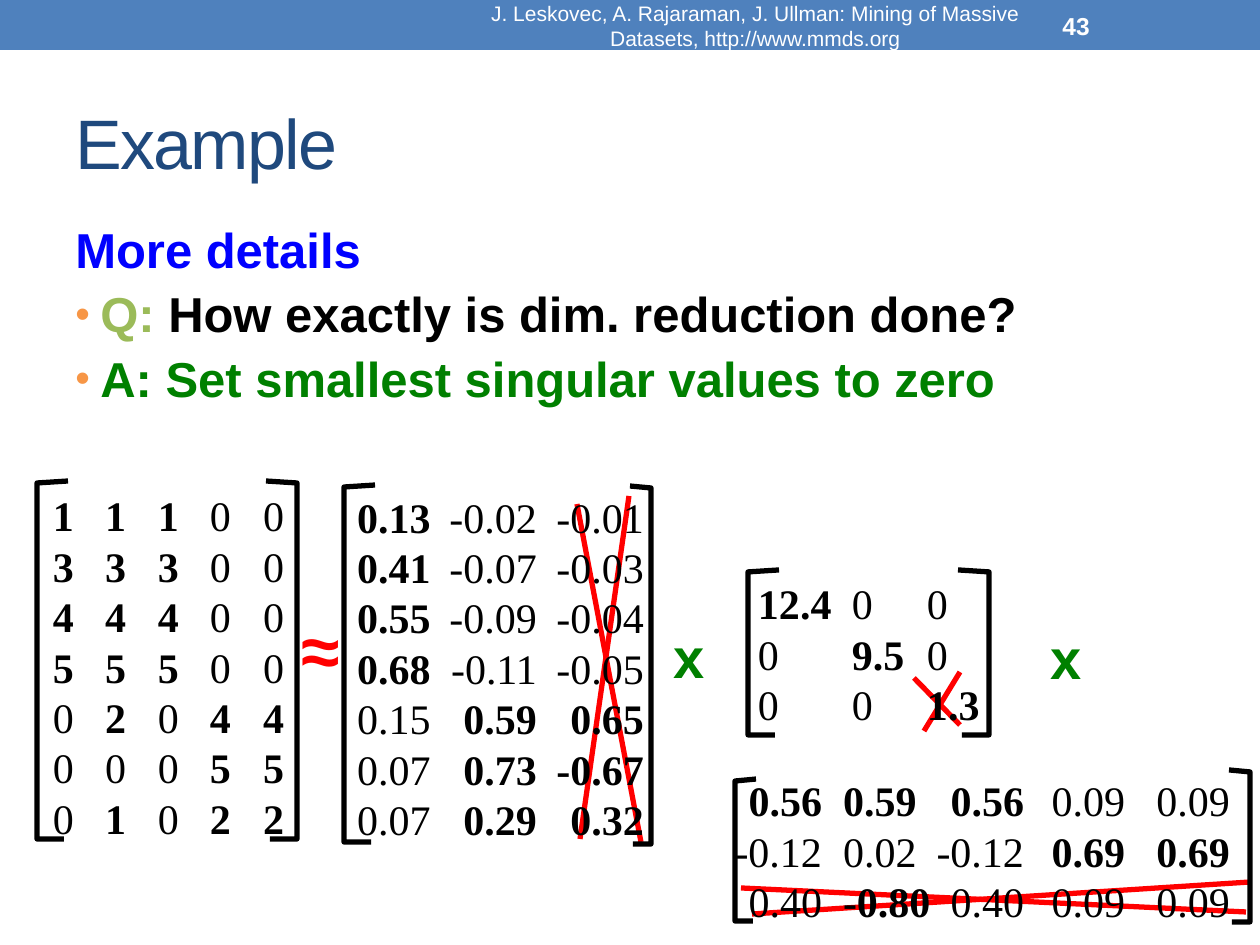
import itertools

import pptx
import pptx.dml.color
import pptx.enum.shapes
import pptx.enum.text
import pptx.oxml.ns
import pptx.util
from lxml import etree

EMU_PER_PX = 914400 / 126
ANCHOR = pptx.enum.text.MSO_ANCHOR
ALIGN = pptx.enum.text.PP_ALIGN

THEME = {
    "bar": "4F81BD", "ink": "000000", "cross": "FF0000", "bullet": "F79646",
    "stroke": 3, "bullet_pct": 85, "row_pitch": 28.8,
    "title": {"size": 40, "color": "1F497D"},
    "lead": {"size": 28, "color": "0000FF", "bold": True},
    "question": {"size": 28, "color": "9BBB59", "bold": True},
    "body": {"size": 28, "color": "000000", "bold": True},
    "answer": {"size": 28, "color": "008000", "bold": True},
    "credit": {"size": 12, "color": "FFFFFF"},
    "number": {"size": 14, "color": "FFFFFF", "bold": True},
    "times": {"size": 32, "color": "008000", "bold": True},
    "approx": {"size": 40, "color": "FF0000", "bold": True},
    "cell": {"size": 24, "color": "000000", "name": "Times New Roman"},
}

# Box (left, top, width, height), columns (alignment, x), rows; * marks a bold cell.
MATRICES = [
    ((31, 481, 274, 369),
     [("l", 53), ("l", 105), ("l", 158), ("l", 210), ("l", 263)],
     ["*1 *1 *1 0 0", "*3 *3 *3 0 0", "*4 *4 *4 0 0", "*5 *5 *5 0 0",
      "0 *2 0 *4 *4", "0 0 0 *5 *5", "0 *1 0 *2 *2"]),
    ((328, 482, 346, 369),
     [("l", 357), ("r", 537), ("r", 644)],
     ["*0.13 -0.02 -0.01", "*0.41 -0.07 -0.03", "*0.55 -0.09 -0.04",
      "*0.68 -0.11 -0.05", "0.15 *0.59 *0.65", "0.07 *0.73 *-0.67",
      "0.07 *0.29 *0.32"]),
    ((746, 569, 273, 165),
     [("l", 758), ("l", 852), ("l", 927)],
     ["*12.4 0 0", "0 *9.5 0", "0 0 *1.3"]),
    ((724, 766, 536, 165),
     [("r", 822), ("l", 843), ("r", 1024), ("r", 1125), ("r", 1230)],
     ["*0.56 *0.59 *0.56 0.09 0.09", "-0.12 0.02 -0.12 *0.69 *0.69",
      "0.40 *-0.80 0.40 0.09 0.09"]),
]

# Upright x, top, bottom, arm length (negative points left).
BRACKETS = [
    (37, 481, 839, 31), (297, 481, 839, -31),
    (344, 485, 842, 31), (651, 486, 844, -21),
    (748, 570, 735, 31), (989, 570, 735, -31),
    (735, 779, 921, 21), (1250, 770, 922, -21),
]

CROSS_STROKES = [
    (924, 731, 960, 672), (914, 678, 960, 725),
    (580, 839, 629, 496), (577, 504, 641, 842),
    (1246, 912, 741, 888), (752, 914, 1250, 882),
]


def px(n):
    return pptx.util.Emu(round(n * EMU_PER_PX))


def rgb(value):
    return pptx.dml.color.RGBColor.from_string(value)


def set_all(target, values):
    for name, value in values.items():
        setattr(target, name, value)


def add_run(p, text, style):
    r = p.add_run()
    r.text = text
    values = {"name": "Arial", "bold": False, **style}
    r.font.color.rgb = rgb(values.pop("color"))
    values["size"] = pptx.util.Pt(values["size"])
    set_all(r.font, values)
    return r


def add_box(s, box, **frame):
    tf = s.shapes.add_textbox(*map(px, box)).text_frame
    set_all(tf, {"word_wrap": True, **frame})
    return tf


def add_label(s, box, text, style, align=ALIGN.LEFT, **frame):
    tf = add_box(s, box, vertical_anchor=ANCHOR.MIDDLE, **frame)
    p = tf.paragraphs[0]
    p.alignment = align
    return add_run(p, text, THEME[style])


def add_child(parent, tag, **attrs):
    return etree.SubElement(parent, pptx.oxml.ns.qn(tag), attrs)


def next_paragraph(tf, index):
    return tf.add_paragraph() if index else tf.paragraphs[0]


def add_bullet(p):
    pPr = p._p.get_or_add_pPr()
    add_child(add_child(pPr, "a:buClr"), "a:srgbClr", val=THEME["bullet"])
    add_child(pPr, "a:buSzPct", val=str(THEME["bullet_pct"] * 1000))
    add_child(pPr, "a:buFont", typeface="Arial")
    add_child(pPr, "a:buChar", char="•")


def add_body(s):
    lines = [
        [("More details", "lead")],
        [("Q: ", "question"), ("How exactly is dim. reduction done?", "body")],
        [("A: Set smallest singular values to zero", "answer")],
    ]
    tf = add_box(s, (63, 220, 1134, 672))
    for i, runs in enumerate(lines):
        p = next_paragraph(tf, i)
        set_all(p, {"line_spacing": 0.9, "space_before": pptx.util.Pt(6.5)})
        pPr = p._p.get_or_add_pPr()
        pPr.set("marL", str(px(25)))
        pPr.set("indent", str(-px(25)))
        if i:
            add_bullet(p)
        for text, style in runs:
            add_run(p, text, THEME[style])


def add_matrix(s, box, columns, rows):
    """Set each row as one paragraph whose cells sit on tab stops."""
    tf = add_box(s, box, margin_left=0, margin_right=0, margin_top=px(9))
    for i, row in enumerate(rows):
        p = next_paragraph(tf, i)
        p.line_spacing = pptx.util.Pt(THEME["row_pitch"])
        tabs = add_child(p._p.get_or_add_pPr(), "a:tabLst")
        for align, x in columns:
            add_child(tabs, "a:tab", pos=str(px(x - box[0])), algn=align)
        for bold, cells in itertools.groupby(row.split(), lambda c: c[0] == "*"):
            text = "".join("\t" + c.lstrip("*") for c in cells)
            add_run(p, text, {**THEME["cell"], "bold": bold})


def set_stroke(sp, color):
    sp.line.color.rgb = rgb(THEME[color])
    sp.line.width = pptx.util.Pt(THEME["stroke"])


def add_bracket(s, x, top, bottom, arm):
    foot = x + round(arm * 0.87)
    builder = s.shapes.build_freeform(x + arm, top, scale=EMU_PER_PX)
    builder.add_line_segments([(x, top + 2), (x, bottom), (foot, bottom)], close=False)
    sp = builder.convert_to_shape()
    sp.fill.background()
    sp.shadow.inherit = False
    set_stroke(sp, "ink")


def add_cross_stroke(s, *ends):
    line = s.shapes.add_connector(
        pptx.enum.shapes.MSO_CONNECTOR.STRAIGHT, *map(px, ends))
    set_stroke(line, "cross")
    add_child(line._element.spPr, "a:effectLst")


def add_header(s):
    bar = s.shapes.add_shape(
        pptx.enum.shapes.MSO_SHAPE.RECTANGLE, *map(px, (0, 0, 1260, 50)))
    bar.shadow.inherit = False
    bar.fill.solid()
    bar.fill.fore_color.rgb = rgb(THEME["bar"])
    bar.line.fill.background()
    credit = ("J. Leskovec, A. Rajaraman, J. Ullman: Mining of Massive Datasets, "
              "http://www.mmds.org")
    add_label(s, (472, 3, 567, 45), credit, "credit", ALIGN.CENTER)
    add_label(s, (1050, 3, 147, 45), "43", "number")


def main():
    prs = pptx.Presentation()
    set_all(prs, {"slide_width": px(1260), "slide_height": px(945)})
    s = prs.slides.add_slide(prs.slide_layouts[6])
    add_header(s)
    title = add_label(s, (63, 73, 1134, 136), "Example", "title")
    title.font._element.set("spc", "-100")
    add_body(s)
    for ends in CROSS_STROKES:
        add_cross_stroke(s, *ends)
    for bracket in BRACKETS:
        add_bracket(s, *bracket)
    for left, top in ((661, 616), (1038, 617)):
        add_label(s, (left, top, 55, 81), "x", "times", word_wrap=False)
    add_label(s, (289, 600, 64, 97), "≈", "approx", word_wrap=False)
    for matrix in MATRICES:
        add_matrix(s, *matrix)
    prs.save("out.pptx")


if __name__ == "__main__":
    main()
